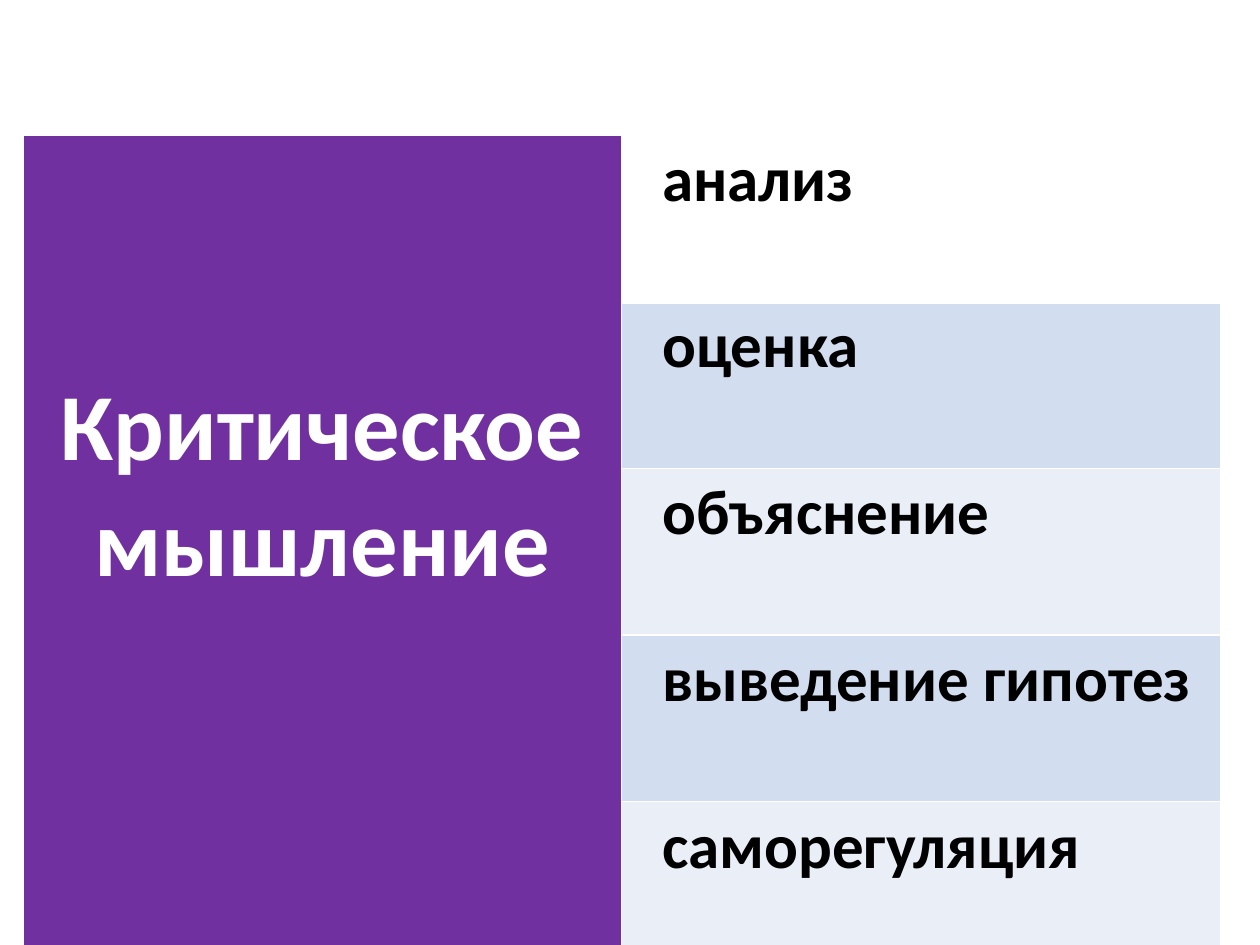
from lxml.etree import SubElement
from pptx import Presentation
from pptx.dml.color import RGBColor
from pptx.enum.text import PP_ALIGN
from pptx.oxml.ns import qn
from pptx.util import Cm, Pt


def add_borders(cell, bottom_width):
    properties = cell._tc.get_or_add_tcPr()
    for side, width in (("L", 1), ("R", 1), ("T", 1), ("B", bottom_width)):
        line = SubElement(properties, qn(f"a:ln{side}"), w=str(Pt(width)))
        fill = SubElement(line, qn("a:solidFill"))
        SubElement(fill, qn("a:srgbClr"), val="FFFFFF")


def write(cell, text, size, color):
    run = cell.text_frame.paragraphs[0].add_run()
    run.text = text
    run.font.name = "Calibri"
    run.font.size = Pt(size)
    run.font.bold = True
    run.font.color.rgb = RGBColor.from_string(color)


skills = [
    ("анализ", None),
    ("оценка", "D2DEEF"),
    ("объяснение", "EAEFF7"),
    ("выведение гипотез", "D2DEEF"),
    ("саморегуляция", "EAEFF7"),
]
column_width = Cm(12.07)
row_height = Cm(3.36)

presentation = Presentation()
presentation.slide_width = Cm(25.4)
presentation.slide_height = Cm(19.05)
slide = presentation.slides.add_slide(presentation.slide_layouts[6])

thinking = slide.shapes.add_table(
    len(skills), 2, Cm(0.46), Cm(2.72), column_width * 2, row_height * len(skills)
).table

for row, (skill, band) in enumerate(skills):
    thinking.rows[row].height = row_height
    for column in range(2):
        add_borders(thinking.cell(row, column), 3 if row == 0 else 1)
    skill_cell = thinking.cell(row, 1)
    skill_cell.margin_left = Cm(0.82)
    if band:
        skill_cell.fill.solid()
        skill_cell.fill.fore_color.rgb = RGBColor.from_string(band)
    else:
        skill_cell.fill.background()
    write(skill_cell, skill, 36, "000000")

topic = thinking.cell(0, 0)
topic.merge(thinking.cell(len(skills) - 1, 0))
topic.fill.solid()
topic.fill.fore_color.rgb = RGBColor.from_string("7030A0")
topic.margin_top = Cm(4.76)
topic.text_frame.paragraphs[0].alignment = PP_ALIGN.CENTER
write(topic, "Критическое мышление", 54, "FFFFFF")

presentation.save("out.pptx")
